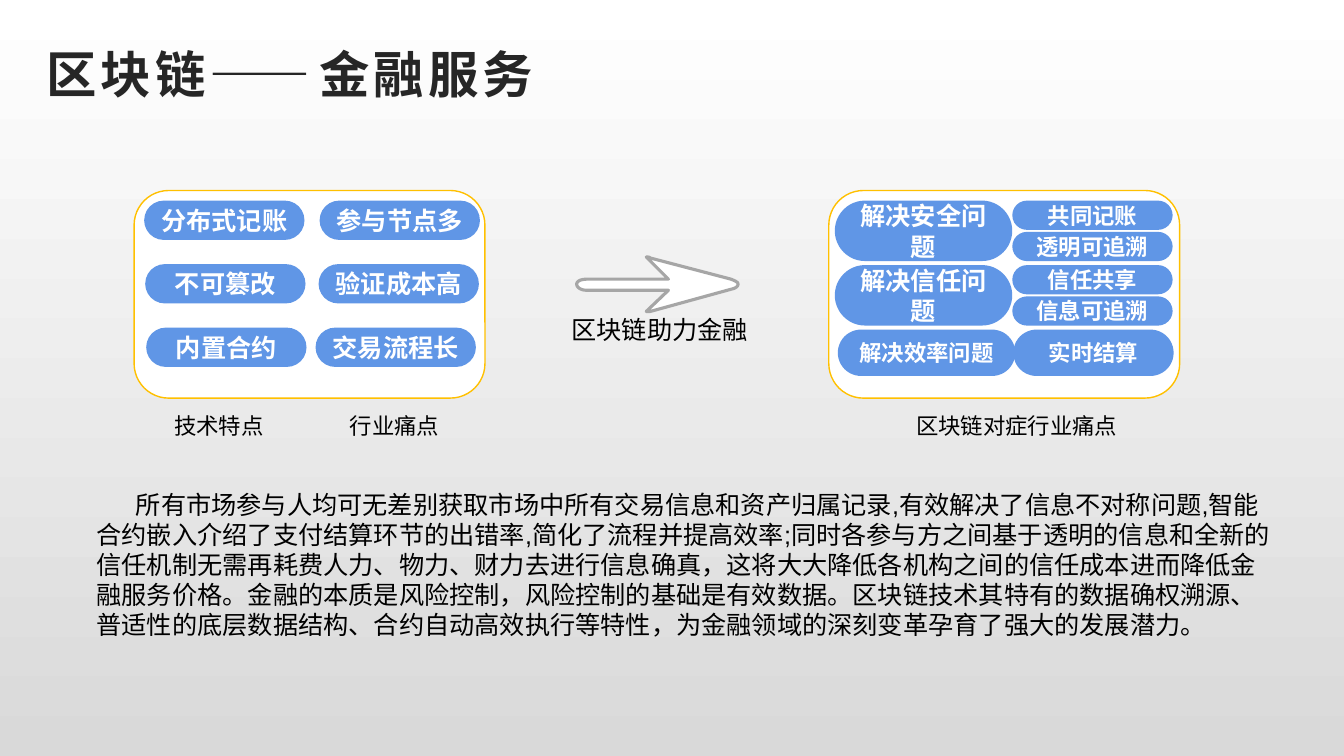
from pptx import Presentation, util as u
from pptx.dml.color import RGBColor
from pptx.enum import shapes, text
from pptx.oxml.ns import qn
from lxml import etree

THEME = {
    "latin": "Arial", "cjk": "Noto Sans CJK SC",
    "ink": "000000", "title": "262626", "white": "FFFFFF", "shade": "D9D9D9",
    "pill": "6096E6", "panel_line": "FFC000", "arrow_line": "A6A6A6",
    "title_size": 36, "body_size": 18, "small_size": 16,
}
TITLE = "区块链——金融服务"
BODY = (
    "所有市场参与人均可无差别获取市场中所有交易信息和资产归属记录,有效解决了信息不对称问题,"
    "智能合约嵌入介绍了支付结算环节的出错率,简化了流程并提高效率;"
    "同时各参与方之间基于透明的信息和全新的信任机制无需再耗费人力、物力、财力去进行信息确真，"
    "这将大大降低各机构之间的信任成本进而降低金融服务价格。"
    "金融的本质是风险控制，风险控制的基础是有效数据。"
    "区块链技术其特有的数据确权溯源、普适性的底层数据结构、合约自动高效执行等特性，"
    "为金融领域的深刻变革孕育了强大的发展潜力。"
)
PANEL_LEFTS = [1.33, 8.22]
FEATURE_ROWS = [
    [("分布式记账", 1.43), ("参与节点多", 3.17)],
    [("不可篡改", 1.44), ("验证成本高", 3.16)],
    [("内置合约", 1.45), ("交易流程长", 3.13)],
]
SOLUTIONS = [
    ("解决安全问题", 8.28, 10.04, 0.6, "body_size", ["共同记账", "透明可追溯"]),
    ("解决信任问题", 8.28, 10.04, 0.6, "body_size", ["信任共享", "信息可追溯"]),
    ("解决效率问题", 8.31, 10.05, 0.46, "small_size", ["实时结算"]),
]
CAPTIONS = [
    ("技术特点", 1.63, 4.04, 1.09, 0.37, "small_size"),
    ("行业痛点", 3.37, 4.04, 1.09, 0.37, "small_size"),
    ("区块链助力金融", 5.57, 3.07, 1.95, 0.4, "body_size"),
    ("区块链对症行业痛点", 8.99, 4.04, 2.2, 0.37, "small_size"),
]
ARROW = [
    [(6.41, 2.55)],
    [(6.43, 2.55), (6.44, 2.55), (6.45, 2.56)],
    [(7.25, 2.77)],
    [(7.3, 2.79), (7.32, 2.8), (7.32, 2.82)],
    [(7.32, 2.84), (7.3, 2.86), (7.25, 2.87)],
    [(6.45, 3.09)], [(6.41, 3.09)], [(6.63, 2.88)], [(5.82, 2.88)],
    [(5.76, 2.88), (5.72, 2.85), (5.72, 2.82)],
    [(5.72, 2.79), (5.76, 2.77), (5.82, 2.77)],
    [(6.63, 2.77)],
]
CURVE_STEPS = 8
PILL_WIDTH, WIDE_PILL_WIDTH = 1.59, 1.76
PILL_TOP, FEATURE_STEP, SOLUTION_STEP = 1.99, 0.63, 0.64
ANSWER_GAP = 0.02


def color(key):
    return RGBColor.from_string(THEME[key])


def write(box, words, size, ink="ink", bold=False):
    para = box.text_frame.paragraphs[0]
    para.add_run().text = words
    font = para.font
    font.size, font.bold = u.Pt(THEME[size]), bold
    font.color.rgb = color(ink)
    font.name = THEME["cjk"] if bold and size != "title_size" else THEME["latin"]
    etree.SubElement(font._element, qn("a:ea")).set("typeface", THEME["cjk"])
    return para


def add_text(page, words, left, top, width, height, size, wrap=False, **style):
    box = page.shapes.add_textbox(*map(u.Inches, (left, top, width, height)))
    box.text_frame.word_wrap = wrap
    return write(box, words, size, **style)


def paint(shape, fill, line=None, weight=1):
    shape.shadow.inherit = False
    shape.fill.solid()
    shape.fill.fore_color.rgb = color(fill)
    if line:
        shape.line.color.rgb = color(line)
        shape.line.width = u.Pt(weight)
    else:
        shape.line.fill.background()


def add_round(page, left, top, width, height):
    return page.shapes.add_shape(
        shapes.MSO_SHAPE.ROUNDED_RECTANGLE, *map(u.Inches, (left, top, width, height)))


def add_pill(page, words, left, top, width, height, size):
    pill = add_round(page, left, top, width, height)
    pill.adjustments[0] = 0.5
    paint(pill, "pill")
    pill.text_frame.vertical_anchor = text.MSO_ANCHOR.MIDDLE
    para = write(pill, words, size, "white", True)
    para.alignment = text.PP_ALIGN.CENTER


def add_arrow(page):
    points = []
    for segment in ARROW:
        segment = [tuple(map(u.Inches, point)) for point in segment]
        if len(segment) == 1:
            points += segment
            continue
        controls = [points[-1], *segment]
        for step in range(1, CURVE_STEPS + 1):
            t = step / CURVE_STEPS
            weights = ((1 - t) ** 3, 3 * t * (1 - t) ** 2, 3 * t * t * (1 - t), t ** 3)
            points.append(tuple(
                round(sum(w * c[axis] for w, c in zip(weights, controls))) for axis in (0, 1)))
    builder = page.shapes.build_freeform(*points[0])
    builder.add_line_segments(points[1:], close=True)
    paint(builder.convert_to_shape(), "white", "arrow_line", 2.25)


def main():
    deck = Presentation()
    deck.slide_width, deck.slide_height = u.Inches(13.33), u.Inches(7.5)
    page = deck.slides.add_slide(deck.slide_layouts[6])
    backdrop = page.background.fill
    backdrop.gradient()
    backdrop.gradient_angle = 270
    for stop, key in zip(backdrop.gradient_stops, ("white", "shade")):
        stop.color.rgb = color(key)

    title = add_text(page, TITLE, 0.36, 0.38, 9.53, 0.71, "title_size",
                     wrap=True, ink="title", bold=True)
    title.font._element.set("spc", "300")

    for left in PANEL_LEFTS:
        paint(add_round(page, left, 1.89, 3.48, 2.06), "white", "panel_line")

    for row, features in enumerate(FEATURE_ROWS):
        top = PILL_TOP + row * FEATURE_STEP
        for words, left in features:
            add_pill(page, words, left, top, PILL_WIDTH, 0.39, "body_size")

    for row, (problem, left, answer_left, height, size, answers) in enumerate(SOLUTIONS):
        top = PILL_TOP + row * SOLUTION_STEP
        add_pill(page, problem, left, top, WIDE_PILL_WIDTH, height, size)
        answer_step = (height + ANSWER_GAP) / len(answers)
        for index, answer in enumerate(answers):
            add_pill(page, answer, answer_left, top + index * answer_step,
                     PILL_WIDTH, answer_step - ANSWER_GAP, "small_size")

    add_arrow(page)
    for caption in CAPTIONS:
        add_text(page, *caption)

    body = add_text(page, BODY, 0.86, 4.8, 11.84, 1.61, "body_size", wrap=True)
    body._p.get_or_add_pPr().set("indent", str(u.Inches(0.39)))
    deck.save("out.pptx")


if __name__ == "__main__":
    main()
